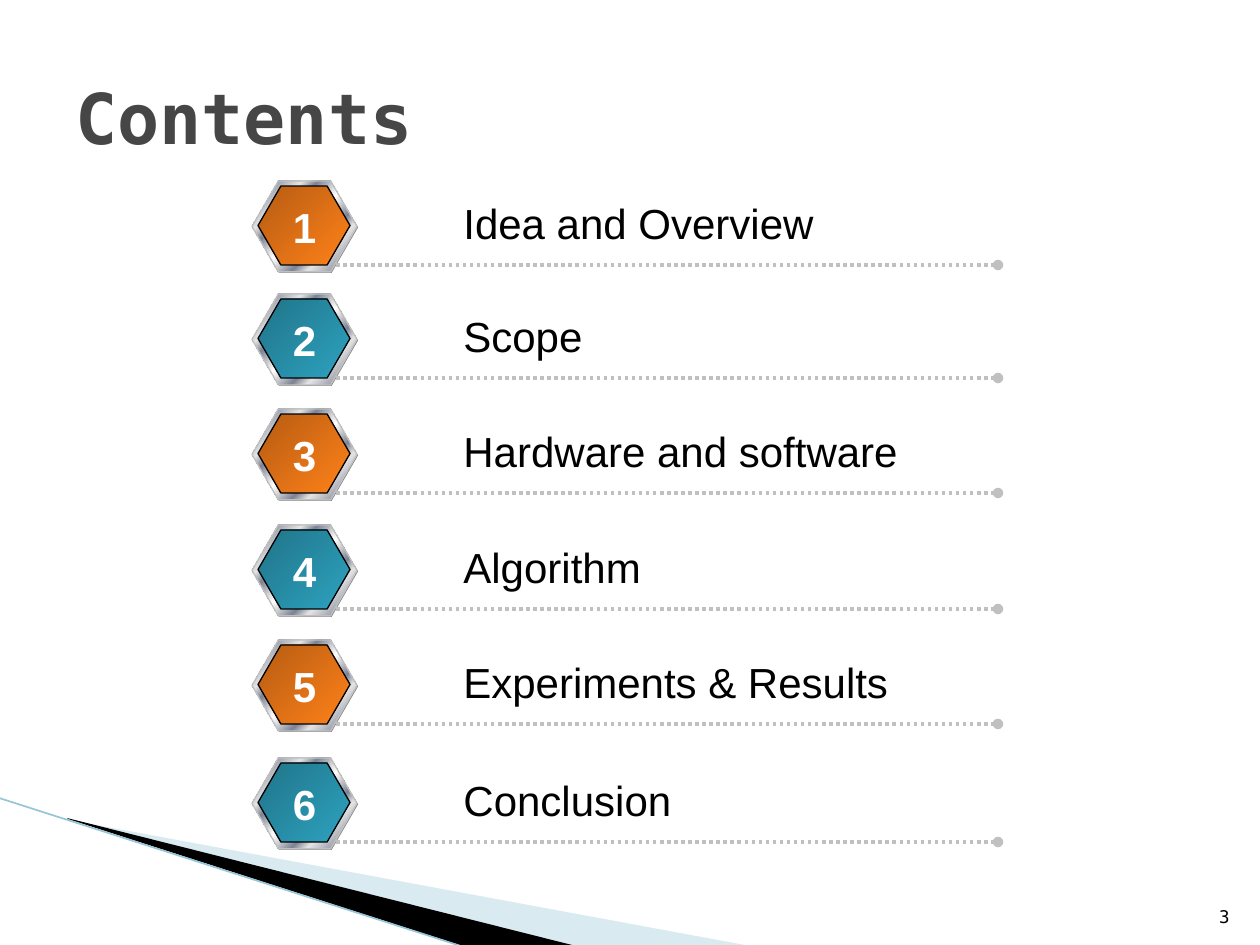
import pptx
import pptx.util
import pptx.dml.color
import pptx.enum.dml
import pptx.enum.shapes
import pptx.enum.text
import pptx.oxml
import pptx.oxml.ns

RGB = pptx.dml.color.RGBColor
SHAPES = pptx.enum.shapes
ALIGN = pptx.enum.text.PP_ALIGN
ANCHOR = pptx.enum.text.MSO_ANCHOR
qn = pptx.oxml.ns.qn
PX = 914400 / 126

BLACK = RGB(0x00, 0x00, 0x00)
WHITE = RGB(0xFF, 0xFF, 0xFF)
HEADING = RGB(0x46, 0x46, 0x46)
SILVER = RGB(0xC0, 0xC0, 0xC0)
GREY = RGB(0x80, 0x80, 0x80)
PALE_BLUE = RGB(0xA0, 0xCB, 0xDC)
EDGE_BLUE = RGB(0x97, 0xC5, 0xD8)
BRIGHT = RGB(0xE6, 0xE6, 0xE6)
STEEL = RGB(0x7D, 0x84, 0x96)
ORANGE = [(0, RGB(0xB6, 0x5C, 0x12)), (100, RGB(0xFF, 0x81, 0x19))]
TEAL = [(0, RGB(0x20, 0x74, 0x89)), (100, RGB(0x2D, 0xA2, 0xBF))]
CHROME = [(0, BRIGHT), (8, STEEL), (26, BRIGHT), (34, STEEL), (46, BRIGHT), (50, WHITE),
          (54, BRIGHT), (66, STEEL), (74, BRIGHT), (92, STEEL), (100, BRIGHT)]

# Content: label, label width, top of the badge
TOPICS = [
    ("Idea and Overview", 379, 181),
    ("Scope", 146, 294),
    ("Hardware and software", 465, 409),
    ("Algorithm", 205, 525),
    ("Experiments & Results", 455, 640),
    ("Conclusion", 236, 758),
]
WEDGES = [
    ([(69, 820), (750, 946), (575, 946), (69, 819)], PALE_BLUE, 40),
    ([(67, 818), (576, 946), (469, 948), (68, 819)], BLACK, 100),
]
TITLE_FONT = {"name": "DejaVu Sans Mono", "size": pptx.util.Pt(40), "bold": True}
PAGE_FONT = {"name": "DejaVu Sans Mono", "size": pptx.util.Pt(10)}
LABEL_FONT = {"name": "Arial", "size": pptx.util.Pt(24)}
NUMBER_FONT = {**LABEL_FONT, "bold": True}


def emu(*lengths):
    return [round(length * PX) for length in lengths]


def add_text(text, box, font, color, align=ALIGN.LEFT, anchor=ANCHOR.TOP, wrap=True):
    frame = slide.shapes.add_textbox(*emu(*box)).text_frame
    frame.word_wrap = wrap
    frame.vertical_anchor = anchor
    paragraph = frame.paragraphs[0]
    paragraph.alignment = align
    run = paragraph.add_run()
    run.text = text
    for key, value in font.items():
        setattr(run.font, key, value)
    run.font.color.rgb = color


def add_line(start, end, color, width):
    line = slide.shapes.add_connector(SHAPES.MSO_CONNECTOR.STRAIGHT, *emu(*start, *end))
    line.line.color.rgb = color
    line.line.width = pptx.util.Pt(width)
    pptx.oxml.ns  # namespace helpers stay reachable through the module
    line._element.spPr.append(pptx.oxml.xmlchemy.OxmlElement("a:effectLst"))
    return line


def set_gradient(fill, stops):
    fill.gradient()
    fill.gradient_angle = 315
    stop_list = fill._xPr.find(qn("a:gradFill")).find(qn("a:gsLst"))
    for old in list(stop_list):
        stop_list.remove(old)
    for position, color in stops:
        stop = stop_list.makeelement(qn("a:gs"), {"pos": str(position * 1000)})
        stop.append(stop.makeelement(qn("a:srgbClr"), {"val": str(color)}))
        stop_list.append(stop)


def add_hexagon(box, fill, outline=None):
    hexagon = slide.shapes.add_shape(SHAPES.MSO_SHAPE.HEXAGON, *emu(*box))
    hexagon.shadow.inherit = False
    hexagon.adjustments[0] = 0.29
    if isinstance(fill, list):
        set_gradient(hexagon.fill, fill)
    else:
        hexagon.fill.solid()
        hexagon.fill.fore_color.rgb = fill
    if outline is None:
        hexagon.line.fill.background()
    else:
        hexagon.line.color.rgb = outline
        hexagon.line.width = pptx.util.Pt(0.75)


presentation = pptx.Presentation()
presentation.slide_width, presentation.slide_height = emu(1260, 945)
slide = presentation.slides.add_slide(presentation.slide_layouts[6])

# Corner wedges
for points, color, opacity in WEDGES:
    builder = slide.shapes.build_freeform(*points[0], scale=PX)
    builder.add_line_segments(points[1:], close=True)
    wedge = builder.convert_to_shape()
    wedge.shadow.inherit = False
    wedge.fill.solid()
    wedge.fill.fore_color.rgb = color
    wedge.line.fill.background()
    if opacity < 100:
        tint = wedge._element.spPr.find(qn("a:solidFill"))[0]
        tint.append(tint.makeelement(qn("a:alpha"), {"val": str(opacity * 1000)}))
add_line((-1, 798), (467, 948), EDGE_BLUE, 0.95)

# Page number and title
add_text("3", (1192, 883, 50, 50), PAGE_FONT, BLACK, ALIGN.RIGHT, ANCHOR.BOTTOM)
add_text("Contents", (63, 38, 1134, 158), TITLE_FONT, HEADING, anchor=ANCHOR.MIDDLE)

# Numbered topics: badge, dotted rule, label
for number, (label, width, top) in enumerate(TOPICS, 1):
    add_hexagon((253, top + 1, 105, 91), GREY)
    add_hexagon((252, top, 105, 91), CHROME, SILVER)
    add_hexagon((258, top + 5, 92, 79), ORANGE if number % 2 else TEAL, BLACK)
    rule = add_line((336, top + 84), (998, top + 84), SILVER, 2)
    rule.line.dash_style = pptx.enum.dml.MSO_LINE.ROUND_DOT
    outline = rule.line._get_or_add_ln()
    outline.append(outline.makeelement(qn("a:tailEnd"), {"type": "oval"}))
    add_text(label, (451, top + 10, width, 63), LABEL_FONT, BLACK, wrap=False)
    add_text(str(number), (280, top + 14, 49, 63), NUMBER_FONT, WHITE, ALIGN.CENTER, wrap=False)

presentation.save("out.pptx")
